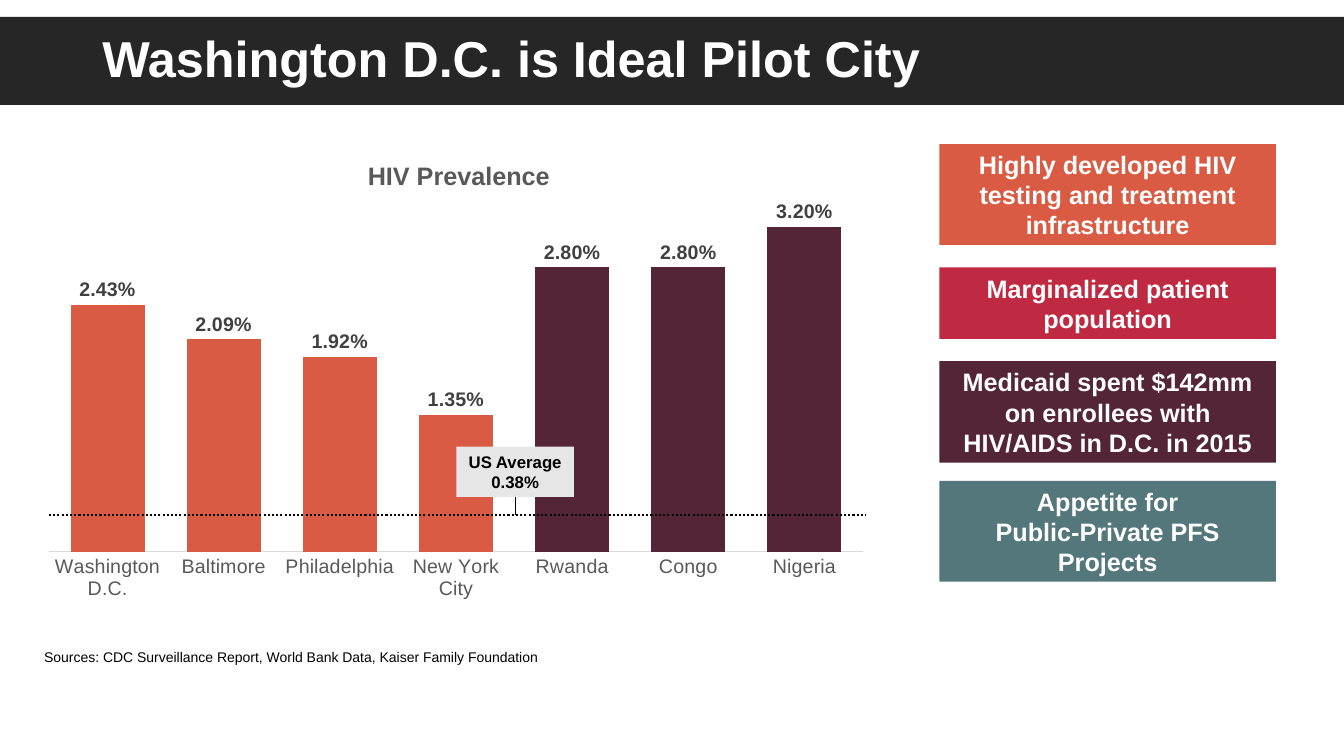
import pptx
import pptx.chart.data
import pptx.dml.color
import pptx.enum.chart
import pptx.enum.dml
import pptx.enum.shapes
import pptx.enum.text
import pptx.oxml
import pptx.oxml.ns
import pptx.util
from pptx.util import Pt

COLOURS = {
    "band": "262626", "white": "FFFFFF", "black": "000000",
    "orange": "D95B43", "red": "C02942", "plum": "542437", "teal": "53777A",
    "callout": "E7E6E6", "axis": "D9D9D9", "grey": "595959", "label": "404040",
}
FONT = "Arial"
PREVALENCE = [
    ("Washington D.C.", 0.0243, "orange"),
    ("Baltimore", 0.0209, "orange"),
    ("Philadelphia", 0.0192, "orange"),
    ("New York City", 0.0135, "orange"),
    ("Rwanda", 0.028, "plum"),
    ("Congo", 0.028, "plum"),
    ("Nigeria", 0.032, "plum"),
]
REASONS = [
    (103, 72, "orange", ["Highly developed HIV testing and treatment infrastructure"]),
    (191, 51, "red", ["Marginalized patient population"]),
    (258, 72.5, "plum", ["Medicaid spent $142mm on enrollees with HIV/AIDS in D.C. in 2015"]),
    (343.5, 72, "teal", ["Appetite for", "Public-Private PFS Projects"]),
]


def rgb(name):
    return pptx.dml.color.RGBColor.from_string(COLOURS[name])


def style_font(font, size, colour, bold=False):
    font.name = FONT
    font.size = Pt(size)
    font.bold = bold
    font.color.rgb = rgb(colour)


def write_lines(box, lines, size, colour, bold=False, align="LEFT", wrap=True):
    frame = box.text_frame
    frame.word_wrap = wrap
    frame.vertical_anchor = pptx.enum.text.MSO_ANCHOR.MIDDLE
    for index, line in enumerate(lines):
        para = frame.add_paragraph() if index else frame.paragraphs[0]
        para.alignment = getattr(pptx.enum.text.PP_ALIGN, align)
        span = para.add_run()
        span.text = line
        style_font(span.font, size, colour, bold)


def add_block(page, left, top, width, height, fill):
    box = page.shapes.add_shape(
        pptx.enum.shapes.MSO_SHAPE.RECTANGLE, Pt(left), Pt(top), Pt(width), Pt(height))
    box.shadow.inherit = False
    box.fill.solid()
    box.fill.fore_color.rgb = rgb(fill)
    box.line.fill.background()
    return box


def add_text(page, left, top, width, height, text, size, colour, bold=False, wrap=True):
    box = page.shapes.add_textbox(Pt(left), Pt(top), Pt(width), Pt(height))
    write_lines(box, [text], size, colour, bold, wrap=wrap)
    return box


def add_line(page, left, top, right, bottom, width):
    line = page.shapes.add_connector(
        pptx.enum.shapes.MSO_CONNECTOR.STRAIGHT, Pt(left), Pt(top), Pt(right), Pt(bottom))
    line.line.width = Pt(width)
    line.line.color.rgb = rgb("black")
    properties = line._element.spPr
    properties.append(properties.makeelement(pptx.oxml.ns.qn("a:effectLst"), {}))
    return line


def set_layout(parent, position, **values):
    for old in parent.findall(pptx.oxml.ns.qn("c:layout")):
        parent.remove(old)
    parts = "".join(f'<c:{key} val="{value}"/>' for key, value in values.items())
    parent.insert(position, pptx.oxml.parse_xml(
        f'<c:layout {pptx.oxml.ns.nsdecls("c")}><c:manualLayout>{parts}'
        '</c:manualLayout></c:layout>'))


def add_prevalence_chart(page):
    data = pptx.chart.data.CategoryChartData(number_format="0.00%")
    data.categories = [place for place, _, _ in PREVALENCE]
    data.add_series("Series 1", [value for _, value, _ in PREVALENCE])
    chart = page.shapes.add_chart(
        pptx.enum.chart.XL_CHART_TYPE.COLUMN_CLUSTERED,
        Pt(24.5), Pt(97), Pt(602.5), Pt(339), data).chart
    style_font(chart.font, 10, "black")
    chart.has_legend = False

    chart.has_title = True
    title = chart.chart_title
    span = title.text_frame.paragraphs[0].add_run()
    span.text = "HIV Prevalence"
    style_font(span.font, 18, "grey", True)
    set_layout(title._element, 1, xMode="edge", yMode="edge", x=0.39, y=0.04)
    set_layout(chart._chartSpace.chart.plotArea, 0, layoutTarget="inner",
               xMode="edge", yMode="edge", x=0.018, y=0.127, w=0.964, h=0.75)

    values = chart.value_axis
    values.minimum_scale = 0
    values.maximum_scale = 0.035
    values.has_major_gridlines = False
    values.visible = False
    places = chart.category_axis
    places.major_tick_mark = pptx.enum.chart.XL_TICK_MARK.NONE
    places.format.line.color.rgb = rgb("axis")
    places.format.line.width = Pt(0.75)
    style_font(places.tick_labels.font, 14, "grey")

    plot = chart.plots[0]
    plot.gap_width = 57
    plot.overlap = -27
    plot.vary_by_categories = False
    plot.has_data_labels = True
    labels = plot.data_labels
    labels.show_value = True
    labels.number_format = "0.00%"
    labels.number_format_is_linked = False
    labels.position = pptx.enum.chart.XL_LABEL_POSITION.OUTSIDE_END
    style_font(labels.font, 14, "label", True)
    for index, (_, _, colour) in enumerate(PREVALENCE):
        fill = plot.series[0].points[index].format.fill
        fill.solid()
        fill.fore_color.rgb = rgb(colour)


def add_us_average(page):
    average = add_line(page, 35, 368, 618.5, 368, 1.5)
    average.line.dash_style = pptx.enum.dml.MSO_LINE.ROUND_DOT
    callout = add_block(page, 326, 319, 84, 36, "callout")
    write_lines(callout, ["US Average", "0.38%"], 12, "black", True, "CENTER")
    stem = add_line(page, 368, 355, 368, 368, 0.5)
    stem.begin_connect(callout, 2)


def main():
    deck = pptx.Presentation()
    deck.slide_width = Pt(960)
    deck.slide_height = Pt(540)
    page = deck.slides.add_slide(deck.slide_layouts[6])

    add_block(page, 0, 12, 960, 63, "band")
    title = add_text(page, 66, 12, 828, 63, "Washington D.C. is Ideal Pilot City",
                     36, "white", True)
    title.text_frame.paragraphs[0].line_spacing = 0.9
    for top, height, fill, lines in REASONS:
        card = add_block(page, 671, top, 240.5, height, fill)
        write_lines(card, lines, 18, "white", True, "CENTER")
    add_prevalence_chart(page)
    add_text(page, 24.5, 459.5, 371, 19.5,
             "Sources: CDC Surveillance Report, World Bank Data, Kaiser Family Foundation",
             10, "black", wrap=False)
    add_us_average(page)
    deck.save("out.pptx")


if __name__ == "__main__":
    main()
